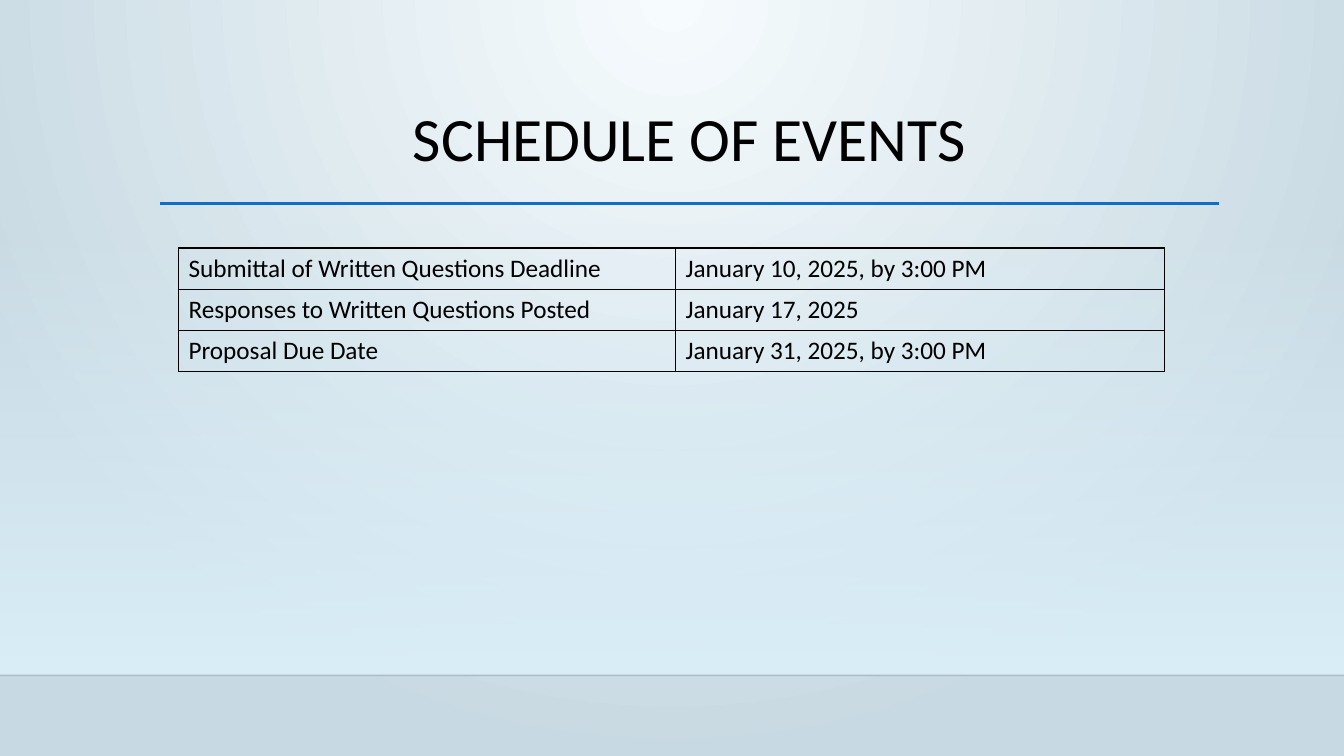
from dataclasses import dataclass
from lxml.etree import SubElement
from pptx import Presentation
from pptx.dml.color import RGBColor
from pptx.enum.shapes import MSO_CONNECTOR, MSO_SHAPE
from pptx.enum.text import MSO_ANCHOR, PP_ALIGN
from pptx.oxml import parse_xml
from pptx.oxml.ns import nsdecls, qn
from pptx.util import Inches, Pt


@dataclass(frozen=True)
class Theme:
    font: str = "Calibri"
    ink: str = "000000"
    accent: str = "0F6FC6"
    horizon: str = "000001"
    glow: str = "F6FBFD"
    edge: str = "C7D9E2"
    haze: str = "DBEFF9"
    title_size: int = 44
    table_size: int = 18
    title_rule: float = 2.5
    thin_rule: float = 1


THEME = Theme()
WIDTH, HEIGHT = 13.33, 7.5
EVENTS = [
    ("Submittal of Written Questions Deadline", "January 10, 2025, by 3:00 PM"),
    ("Responses to Written Questions Posted", "January 17, 2025"),
    ("Proposal Due Date", "January 31, 2025, by 3:00 PM"),
]


def write_text(frame, text, *, size, align=PP_ALIGN.LEFT, spacing=1.0):
    frame.word_wrap = True
    paragraph = frame.paragraphs[0]
    paragraph.alignment = align
    paragraph.line_spacing = spacing
    run = paragraph.add_run()
    run.text = text
    run.font.name = THEME.font
    run.font.size = Pt(size)
    run.font.color.rgb = RGBColor.from_string(THEME.ink)


def apply_gradient(fill, parent, start, end, direction, start_alpha=100):
    fill.gradient()
    gradient = parse_xml(
        f'<a:gradFill {nsdecls("a")} rotWithShape="1"><a:gsLst>'
        f'<a:gs pos="0"><a:srgbClr val="{start}">'
        f'<a:alpha val="{start_alpha * 1000}"/></a:srgbClr></a:gs>'
        f'<a:gs pos="100000"><a:srgbClr val="{end}"/></a:gs>'
        f'</a:gsLst>{direction}</a:gradFill>'
    )
    parent.replace(parent.find(qn("a:gradFill")), gradient)


def draw_rule(slide, left, top, width, color, weight, alpha=100):
    rule = slide.shapes.add_connector(
        MSO_CONNECTOR.STRAIGHT,
        Inches(left), Inches(top), Inches(left + width), Inches(top),
    )
    rule.line.color.rgb = RGBColor.from_string(color)
    rule.line.width = Pt(weight)
    properties = rule._element.spPr
    if alpha < 100:
        tint = properties.find(".//" + qn("a:srgbClr"))
        SubElement(tint, qn("a:alpha"), val=str(alpha * 1000))
    SubElement(properties, qn("a:effectLst"))


def draw_backdrop(slide, left, top, width, height):
    background = slide.background.fill
    apply_gradient(
        background, slide._element.find(".//" + qn("p:bgPr")), THEME.glow, THEME.edge,
        '<a:path path="circle"><a:fillToRect l="43000" t="0" r="43000" b="100000"/></a:path>',
    )
    haze = slide.shapes.add_shape(
        MSO_SHAPE.RECTANGLE, Inches(left), Inches(top), Inches(width), Inches(height)
    )
    haze.shadow.inherit = False
    haze.line.fill.background()
    apply_gradient(
        haze.fill, haze._element.spPr, THEME.haze, THEME.haze,
        '<a:lin ang="5400000" scaled="0"/>', start_alpha=0,
    )
    draw_rule(slide, left, top + height, width, THEME.horizon, THEME.thin_rule, alpha=20)


def draw_title(slide, left, top, width, height):
    draw_rule(slide, left, top + 1, width, THEME.accent, THEME.title_rule)
    title = slide.shapes.add_textbox(
        Inches(left), Inches(top), Inches(width), Inches(height)
    )
    title.text_frame.vertical_anchor = MSO_ANCHOR.TOP
    write_text(title.text_frame, "SCHEDULE OF EVENTS", size=THEME.title_size,
               align=PP_ALIGN.CENTER, spacing=0.9)


def outline_cell(cell):
    properties = cell._tc.get_or_add_tcPr()
    for index, side in enumerate(("lnL", "lnR", "lnT", "lnB")):
        properties.insert(index, parse_xml(
            f'<a:{side} {nsdecls("a")} w="{Pt(THEME.thin_rule)}"><a:solidFill>'
            f'<a:srgbClr val="{THEME.ink}"/></a:solidFill></a:{side}>'
        ))


def draw_schedule(slide, left, top, column_widths, row_height):
    schedule = slide.shapes.add_table(
        len(EVENTS), len(column_widths), Inches(left), Inches(top),
        Inches(sum(column_widths)), Inches(row_height * len(EVENTS)),
    ).table
    schedule.first_row = False
    schedule.horz_banding = False
    for column, width in zip(schedule.columns, column_widths):
        column.width = Inches(width)
    for row, event in zip(schedule.rows, EVENTS):
        row.height = Inches(row_height)
        for cell, text in zip(row.cells, event):
            cell.fill.background()
            outline_cell(cell)
            write_text(cell.text_frame, text, size=THEME.table_size)


def main():
    presentation = Presentation()
    presentation.slide_width = Inches(WIDTH)
    presentation.slide_height = Inches(HEIGHT)
    slide = presentation.slides.add_slide(presentation.slide_layouts[6])
    draw_backdrop(slide, 0, 2.21, WIDTH, 4.49)
    draw_title(slide, 1.59, 1.02, 10.5, 1.15)
    draw_schedule(slide, 1.77, 2.46, (4.93, 4.85), 0.41)
    presentation.save("out.pptx")


if __name__ == "__main__":
    main()
